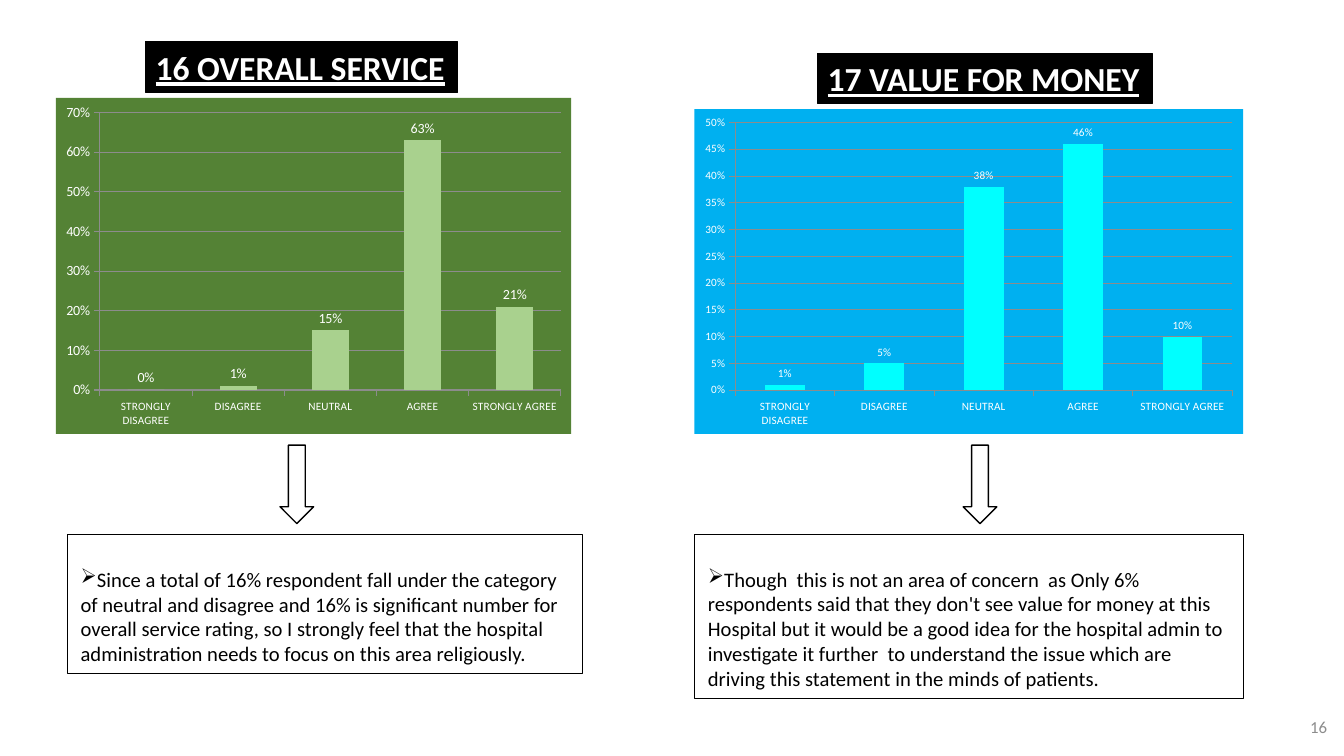
from dataclasses import dataclass

from lxml.etree import SubElement
from pptx import Presentation
from pptx.chart.data import CategoryChartData
from pptx.dml.color import RGBColor
from pptx.enum.chart import XL_CHART_TYPE, XL_LABEL_POSITION, XL_TICK_MARK
from pptx.enum.shapes import MSO_SHAPE
from pptx.enum.text import MSO_ANCHOR, PP_ALIGN
from pptx.oxml import parse_xml
from pptx.oxml.ns import nsdecls, qn
from pptx.util import Pt


@dataclass(frozen=True)
class Theme:
    font: str = "Calibri"
    black: str = "000000"
    white: str = "FFFFFF"
    grey: str = "8C8C8C"
    green: str = "548235"
    light_green: str = "A9D18E"
    blue: str = "00B0F0"
    cyan: str = "00FFFF"
    title: float = 24
    note: float = 14.7
    number: float = 12
    chart: float = 10
    chart_small: float = 8


T = Theme()
CATEGORIES = ["STRONGLY DISAGREE", "DISAGREE", "NEUTRAL", "AGREE", "STRONGLY AGREE"]


@dataclass(frozen=True)
class Panel:
    """Box of one question; the *_dx values are offsets from its left edge."""
    left: float
    top: float
    width: float
    title: str
    title_dx: float
    title_width: float
    arrow_dx: float
    note: str
    note_dx: float
    note_height: float
    values: tuple
    axis_max: float
    axis_step: float
    back: str
    bar: str
    label_size: float


PANELS = [
    Panel(40, 30, 368, "16 OVERALL SERVICE", 64, 223, 160,
          "Since a total of 16% respondent fall under the category of neutral and "
          "disagree and 16% is significant number for overall service rating, so I "
          "strongly feel that the hospital administration needs to focus on this "
          "area religiously.",
          8, 99, (0, 0.01, 0.15, 0.63, 0.21), 0.7, 0.1,
          T.green, T.light_green, T.chart),
    Panel(496, 38, 392, "17 VALUE FOR MONEY", 88, 239, 192,
          "Though  this is not an area of concern  as Only 6% respondents said that "
          "they don't see value for money at this Hospital but it would be a good "
          "idea for the hospital admin to investigate it further  to understand the "
          "issue which are driving this statement in the minds of patients.",
          0, 117, (0.01, 0.05, 0.38, 0.46, 0.1), 0.5, 0.05,
          T.blue, T.cyan, T.chart_small),
]
TITLE_HEIGHT, TITLE_GAP = 36, 4
CHART_BOTTOM, ARROW_TOP, NOTE_TOP = 310, 318, 382


def rgb(value):
    return RGBColor.from_string(value)


def set_font(font, size, color):
    font.name, font.size = T.font, Pt(size)
    font.color.rgb = rgb(color)


def add_box(slide, kind, box, fill, line_width):
    s = slide.shapes.add_shape(kind, *map(Pt, box))
    s.shadow.inherit = False
    s.fill.solid()
    s.fill.fore_color.rgb = rgb(fill)
    s.line.color.rgb = rgb(T.black)
    s.line.width = Pt(line_width)
    return s


def write(s, text, size, color, align=PP_ALIGN.LEFT):
    p = s.text_frame.paragraphs[0]
    p.text = text
    p.alignment = align
    set_font(p.runs[0].font, size, color)
    return p


def add_title(slide, box, text):
    s = add_box(slide, MSO_SHAPE.RECTANGLE, box, T.black, 0.75)
    s.text_frame.word_wrap = False
    font = write(s, text, T.title, T.white).runs[0].font
    font.bold = font.underline = True


def add_note(slide, box, text):
    s = add_box(slide, MSO_SHAPE.RECTANGLE, box, T.white, 0.75)
    tf = s.text_frame
    tf.word_wrap = True
    tf.vertical_anchor = MSO_ANCHOR.TOP
    tf.margin_left = tf.margin_right = Pt(9.6)
    tf.margin_top, tf.margin_bottom = Pt(22.8), Pt(4.8)
    p = write(s, text, T.note, T.black)
    SubElement(p._p.get_or_add_pPr(), qn("a:buChar"), char="➢")


def fill_chart(chart, color):
    chart._chartSpace.find(qn("c:chart")).addnext(parse_xml(
        f'<c:spPr {nsdecls("c", "a")}><a:solidFill><a:srgbClr val="{color}"/>'
        '</a:solidFill><a:ln><a:noFill/></a:ln></c:spPr>'))


def add_bar_chart(slide, box, panel):
    data = CategoryChartData(number_format="0%")
    data.categories = CATEGORIES
    data.add_series("Series 1", panel.values)
    chart = slide.shapes.add_chart(
        XL_CHART_TYPE.COLUMN_CLUSTERED, *map(Pt, box), data).chart
    chart.has_legend = chart.has_title = False
    set_font(chart.font, panel.label_size, T.white)
    fill_chart(chart, panel.back)

    cat, val = chart.category_axis, chart.value_axis
    for axis, size in ((cat, T.chart_small), (val, panel.label_size)):
        axis.major_tick_mark = XL_TICK_MARK.OUTSIDE
        axis.format.line.color.rgb = rgb(T.grey)
        set_font(axis.tick_labels.font, size, T.white)
    val.minimum_scale, val.maximum_scale = 0, panel.axis_max
    val.major_unit = panel.axis_step
    val.major_gridlines.format.line.color.rgb = rgb(T.grey)
    val.tick_labels.number_format = "0%"
    val.tick_labels.number_format_is_linked = False

    plot = chart.plots[0]
    plot.vary_by_categories = False
    plot.gap_width = 150
    plot.has_data_labels = True
    labels = plot.data_labels
    labels.show_value = True
    labels.number_format, labels.number_format_is_linked = "0%", False
    labels.position = XL_LABEL_POSITION.OUTSIDE_END
    set_font(labels.font, panel.label_size, T.white)
    fill = plot.series[0].format.fill
    fill.solid()
    fill.fore_color.rgb = rgb(panel.bar)


def add_panel(slide, panel):
    x, y, w = panel.left, panel.top, panel.width
    chart_top = y + TITLE_HEIGHT + TITLE_GAP
    add_note(slide, (x + panel.note_dx, NOTE_TOP, w, panel.note_height), panel.note)
    add_bar_chart(slide, (x, chart_top, w, CHART_BOTTOM - chart_top), panel)
    add_box(slide, MSO_SHAPE.DOWN_ARROW, (x + panel.arrow_dx, ARROW_TOP, 24, 56),
            T.white, 1)
    add_title(slide, (x + panel.title_dx, y, panel.title_width, TITLE_HEIGHT),
              panel.title)


def add_slide_number(slide, box, number):
    s = slide.shapes.add_textbox(*map(Pt, box))
    tf = s.text_frame
    tf.word_wrap = True
    tf.vertical_anchor = MSO_ANCHOR.MIDDLE
    tf.margin_left = tf.margin_right = tf.margin_top = tf.margin_bottom = 0
    write(s, number, T.number, T.grey, PP_ALIGN.RIGHT)


def main():
    prs = Presentation()
    prs.slide_width, prs.slide_height = Pt(960), Pt(540)
    slide = prs.slides.add_slide(prs.slide_layouts[6])
    for panel in PANELS:
        add_panel(slide, panel)
    add_slide_number(slide, (891, 499, 57, 41), "16")
    prs.save("out.pptx")


if __name__ == "__main__":
    main()
